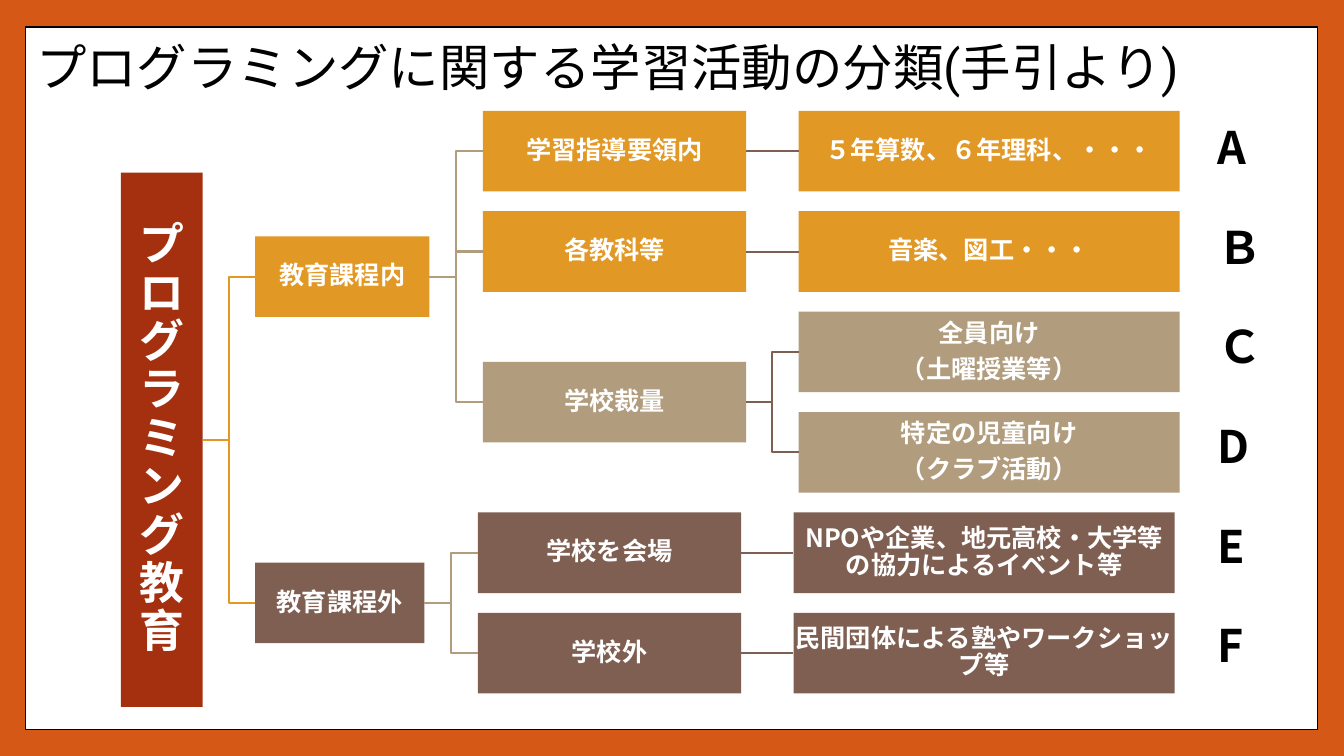
from dataclasses import dataclass

from lxml import etree
from pptx import Presentation
from pptx.dml.color import RGBColor
from pptx.enum.shapes import MSO_CONNECTOR, MSO_SHAPE
from pptx.enum.text import MSO_ANCHOR, PP_ALIGN
from pptx.oxml.ns import qn
from pptx.util import Inches, Pt

RECTANGLE = MSO_SHAPE.RECTANGLE
ELBOW, STRAIGHT = MSO_CONNECTOR.ELBOW, MSO_CONNECTOR.STRAIGHT
LEFT, CENTER = PP_ALIGN.LEFT, PP_ALIGN.CENTER
TOP, MIDDLE = MSO_ANCHOR.TOP, MSO_ANCHOR.MIDDLE
LEFT_SITE, RIGHT_SITE = 1, 3


@dataclass(frozen=True)
class Theme:
    background: str = "D55816"
    white: str = "FFFFFF"
    black: str = "000000"
    red: str = "A5300F"
    orange: str = "E19825"
    tan: str = "B19C7D"
    brown: str = "7F5F52"
    title_font: str = "Roboto"
    font: str = "Noto Sans CJK JP"
    title_size: int = 36
    large_size: int = 32
    box_size: int = 18


theme = Theme()


def color(value):
    return RGBColor.from_string(value)


def write_text(shape, lines, size, text_color, align=CENTER, anchor=MIDDLE,
               inset=0.01, latin=theme.font, bold=True, spacing=0.9, after=0):
    """Fill a shape with one paragraph per line, in Latin and East Asian fonts."""
    frame = shape.text_frame
    frame.word_wrap = True
    frame.vertical_anchor = anchor
    frame.margin_left = frame.margin_right = Inches(inset)
    frame.margin_top = frame.margin_bottom = Inches(min(inset, 0.05))
    for index, line in enumerate(lines):
        paragraph = frame.add_paragraph() if index else frame.paragraphs[0]
        paragraph.alignment = align
        paragraph.line_spacing = spacing
        paragraph.space_after = Pt(after)
        run = paragraph.add_run()
        run.text = line
        run.font.size = Pt(size)
        run.font.bold = bold
        run.font.name = latin
        run.font.color.rgb = color(text_color)
        east_asian = etree.SubElement(run.font._element, qn("a:ea"))
        east_asian.set("typeface", theme.font)


presentation = Presentation()
presentation.slide_width = Inches(13.33)
presentation.slide_height = Inches(7.5)
slide = presentation.slides.add_slide(presentation.slide_layouts[6])
slide.background.fill.solid()
slide.background.fill.fore_color.rgb = color(theme.background)

# White panel and title
panel = slide.shapes.add_shape(
    RECTANGLE, Inches(0.25), Inches(0.27), Inches(12.82), Inches(6.97))
panel.shadow.inherit = False
panel.fill.solid()
panel.fill.fore_color.rgb = color(theme.white)
panel.line.color.rgb = color(theme.black)
panel.line.width = Pt(1)

title = slide.shapes.add_textbox(
    Inches(0.26), Inches(0.27), Inches(12.8), Inches(0.86))
write_text(title, ["プログラミングに関する学習活動の分類(手引より)"], theme.title_size,
           theme.black, align=LEFT, inset=0.1, latin=theme.title_font, bold=False)

# Tree boxes: key, row, left, width, fill, lines
FIRST_CENTER, ROW_STEP, BOX_HEIGHT = 1.5, 0.996, 0.8
ROOT_HEIGHT = 5.3
boxes = [
    ("root", 2.875, 1.2, 0.81, theme.red, ["プログラミング教育"]),
    ("inside", 1.25, 2.53, 1.73, theme.orange, ["教育課程内"]),
    ("outside", 4.5, 2.53, 1.68, theme.brown, ["教育課程外"]),
    ("guideline", 0, 4.79, 2.61, theme.orange, ["学習指導要領内"]),
    ("subjects", 1, 4.79, 2.61, theme.orange, ["各教科等"]),
    ("discretion", 2.5, 4.79, 2.61, theme.tan, ["学校裁量"]),
    ("at school", 4, 4.74, 2.61, theme.brown, ["学校を会場"]),
    ("off school", 5, 4.74, 2.61, theme.brown, ["学校外"]),
    ("A", 0, 7.92, 3.78, theme.orange, ["５年算数、６年理科、・・・"]),
    ("B", 1, 7.92, 3.78, theme.orange, ["音楽、図工・・・"]),
    ("C", 2, 7.92, 3.78, theme.tan, ["全員向け", "（土曜授業等）"]),
    ("D", 3, 7.92, 3.78, theme.tan, ["特定の児童向け", "（クラブ活動）"]),
    ("E", 4, 7.87, 3.78, theme.brown, ["NPOや企業、地元高校・大学等の協力によるイベント等"]),
    ("F", 5, 7.87, 3.78, theme.brown, ["民間団体による塾やワークショップ等"]),
]
box_shapes = {}
for key, row, left, width, fill, lines in boxes:
    is_root = key == "root"
    height = ROOT_HEIGHT if is_root else BOX_HEIGHT
    top = FIRST_CENTER + row * ROW_STEP - height / 2
    box = slide.shapes.add_shape(
        RECTANGLE, Inches(left), Inches(top), Inches(width), Inches(height))
    box.shadow.inherit = False
    box.fill.solid()
    box.fill.fore_color.rgb = color(fill)
    box.line.fill.background()
    size = theme.large_size if is_root else theme.box_size
    write_text(box, lines, size, theme.white,
               inset=0.02 if is_root else 0.01, after=0.35 * size)
    box_shapes[key] = box

# Branches: parent, children, line color
branches = [
    ("root", ["inside", "outside"], theme.orange),
    ("inside", ["guideline", "subjects", "discretion"], theme.tan),
    ("outside", ["at school", "off school"], theme.tan),
    ("guideline", ["A"], theme.brown),
    ("subjects", ["B"], theme.brown),
    ("discretion", ["C", "D"], theme.brown),
    ("at school", ["E"], theme.brown),
    ("off school", ["F"], theme.brown),
]
for parent, children, line_color in branches:
    for child in children:
        kind = STRAIGHT if len(children) == 1 else ELBOW
        connector = slide.shapes.add_connector(kind, 0, 0, 0, 0)
        connector.begin_connect(box_shapes[parent], RIGHT_SITE)
        connector.end_connect(box_shapes[child], LEFT_SITE)
        connector.line.color.rgb = color(line_color)
        connector.line.width = Pt(1.5)
        etree.SubElement(connector._element.spPr, qn("a:effectLst"))

# Category letters
for index, letter in enumerate(["A", "Ｂ", "Ｃ", "D", "E", "F"]):
    label = slide.shapes.add_textbox(
        Inches(11.98), Inches(1.14 + index * 0.988), Inches(0.47), Inches(0.64))
    write_text(label, [letter], theme.large_size, theme.black, align=LEFT,
               anchor=TOP, inset=0.1, spacing=1.0)

presentation.save("out.pptx")
